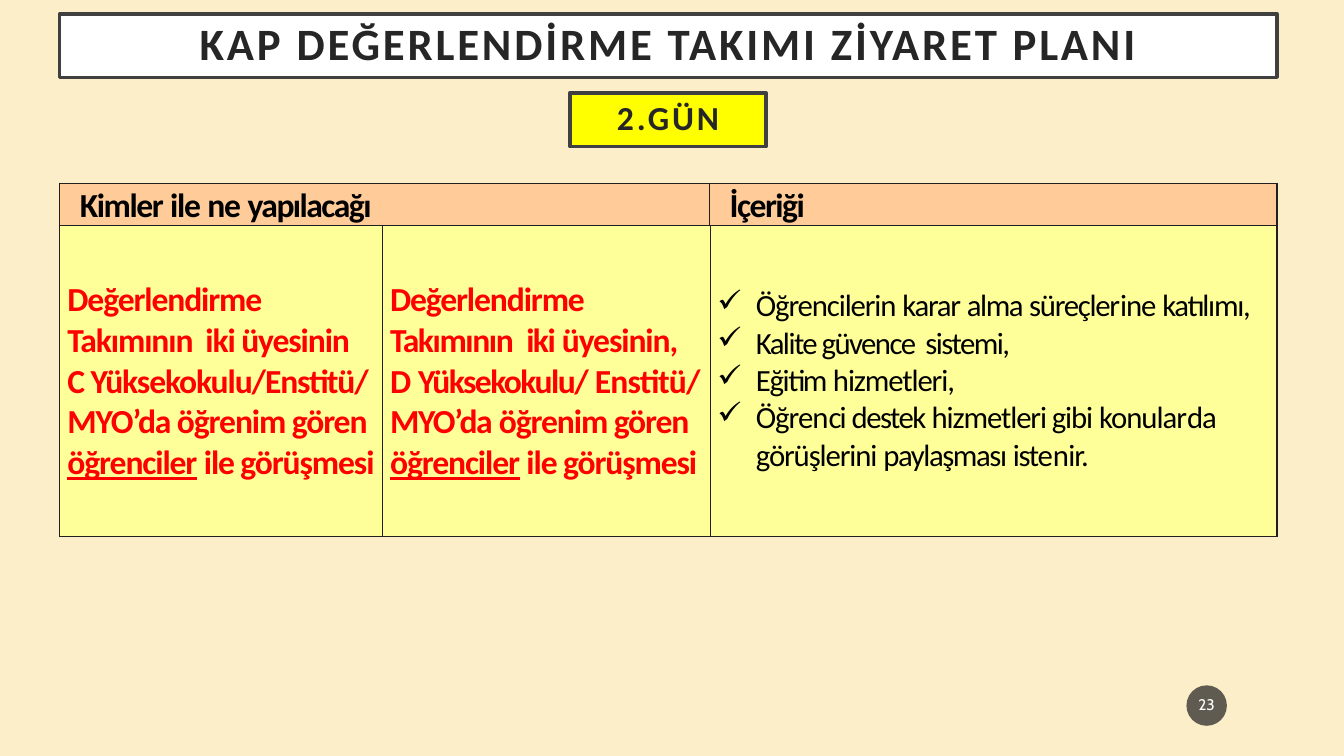
from dataclasses import dataclass

from lxml.etree import SubElement
from pptx import Presentation
from pptx.dml.color import RGBColor
from pptx.enum.shapes import MSO_SHAPE
from pptx.enum.text import MSO_ANCHOR, PP_ALIGN
from pptx.oxml.ns import qn
from pptx.util import Cm, Pt

LEFT = 1.5
WIDTH = 30.68
RED = "FF0000"
BLACK = "000000"
PALE_YELLOW = "FFFF99"


@dataclass
class Run:
    text: str
    spacing: float = -0.8
    underline: bool = False


@dataclass
class Label:
    text: str
    left: float
    top: float
    width: float
    height: float
    fill: str
    size: float
    color: str = "262626"
    font: str = "Calibri"
    bold: bool = True
    spacing: float = 2
    margin: float = 0.5
    geometry: MSO_SHAPE = MSO_SHAPE.RECTANGLE
    line: str | None = "404040"
    opacity: int = 100


@dataclass
class CellContent:
    paragraphs: list[list[Run]]
    fill: str = PALE_YELLOW
    color: str = RED
    size: float = 24
    bold: bool = True
    indent: float = 0.2
    hanging: float = 0
    bullet: str = ""
    space_before: float = 0
    top_margin: float = 0.03


@dataclass
class TableBand:
    top: float
    height: float
    column_widths: list[float]
    cells: list[CellContent]


def rgb(color: str) -> RGBColor:
    return RGBColor.from_string(color)


def add_text(paragraph, text: str, *, size: float, color: str, font: str = "Calibri",
             bold: bool = False, underline: bool = False, spacing: float = 0) -> None:
    run = paragraph.add_run()
    run.text = text
    run.font.name = font
    run.font.size = Pt(size)
    run.font.bold = bold
    run.font.underline = underline
    run.font.color.rgb = rgb(color)
    run._r.get_or_add_rPr().set("spc", str(round(spacing * 100)))


def add_label(slide, label: Label) -> None:
    shape = slide.shapes.add_shape(label.geometry, Cm(label.left), Cm(label.top),
                                   Cm(label.width), Cm(label.height))
    shape.shadow.inherit = False
    shape.fill.solid()
    shape.fill.fore_color.rgb = rgb(label.fill)
    if label.opacity < 100:
        color = shape._element.spPr.find(qn("a:solidFill"))[0]
        SubElement(color, qn("a:alpha")).set("val", str(label.opacity * 1000))
    if label.line:
        shape.line.color.rgb = rgb(label.line)
        shape.line.width = Pt(2.5)
    else:
        shape.line.fill.background()
    frame = shape.text_frame
    frame.word_wrap = True
    frame.vertical_anchor = MSO_ANCHOR.MIDDLE
    frame.margin_left = frame.margin_right = Cm(label.margin)
    frame.margin_top = frame.margin_bottom = Cm(label.margin)
    paragraph = frame.paragraphs[0]
    paragraph.alignment = PP_ALIGN.CENTER
    paragraph.line_spacing = 0.9
    add_text(paragraph, label.text, size=label.size, color=label.color,
             font=label.font, bold=label.bold, spacing=label.spacing)


def set_borders(cell, color: str = "231F20", width: float = 1) -> None:
    properties = cell._tc.get_or_add_tcPr()
    for side in ("lnL", "lnR", "lnT", "lnB"):
        line = SubElement(properties, qn(f"a:{side}"), w=str(Pt(width)))
        SubElement(SubElement(line, qn("a:solidFill")), qn("a:srgbClr"), val=color)


def fill_cell(cell, content: CellContent) -> None:
    set_borders(cell)
    cell.fill.solid()
    cell.fill.fore_color.rgb = rgb(content.fill)
    cell.vertical_anchor = MSO_ANCHOR.MIDDLE
    cell.margin_left = cell.margin_right = cell.margin_bottom = 0
    cell.margin_top = Cm(content.top_margin)
    frame = cell.text_frame
    for index, runs in enumerate(content.paragraphs):
        paragraph = frame.add_paragraph() if index else frame.paragraphs[0]
        paragraph.space_before = Pt(content.space_before)
        properties = paragraph._p.get_or_add_pPr()
        properties.set("marL", str(Cm(content.indent)))
        properties.set("indent", str(Cm(-content.hanging)))
        if content.bullet:
            SubElement(properties, qn("a:buChar"), char=content.bullet)
        for run in runs:
            add_text(paragraph, run.text, size=content.size, color=content.color,
                     bold=content.bold, underline=run.underline, spacing=run.spacing)


def add_band(slide, band: TableBand) -> None:
    table = slide.shapes.add_table(1, len(band.cells), Cm(LEFT), Cm(band.top),
                                   Cm(WIDTH), Cm(band.height)).table
    table.first_row = table.horz_banding = False
    for column, width in zip(table.columns, band.column_widths):
        column.width = Cm(width)
    for cell, content in zip(table.iter_cells(), band.cells):
        fill_cell(cell, content)


def heading(runs: list[Run]) -> CellContent:
    return CellContent([runs], fill="FFCC99", color=BLACK, indent=2.67, hanging=2.16,
                       space_before=1.6, top_margin=0.05)


LABELS = [
    Label("23", 29.9, 17.27, 1.02, 1.02, "1D1D1D", 11, color="FFFFFF", font="Cabin",
          bold=False, spacing=0, margin=0.05, geometry=MSO_SHAPE.OVAL, line=None, opacity=70),
    Label("KAP DEĞERLENDİRME TAKIMI ZİYARET PLANI", LEFT, 0.35, WIDTH, 1.6, "FFFFFF", 32),
    Label("2.GÜN", 14.36, 2.34, 4.95, 1.35, "FFFF00", 24),
]

STUDENTS = [Run("öğrenciler", underline=True), Run(" ile görüşmesi")]

TEAM_C = CellContent([
    [Run("Değerlendirme Takımının  iki üyesinin")],
    [Run("C Yüksekokulu/Enstitü/")],
    [Run("MYO’da öğrenim gören "), *STUDENTS],
])
TEAM_D = CellContent([
    [Run("Değerlendirme "), Run("Takımının  ", -1), Run("iki ", -1.1), Run("üyesinin,")],
    [Run("D ", -0.5), Run("Yüksekokulu/ ", -1.1), Run("Enstitü/", -0.6)],
    [Run("MYO’da ", -1), Run("öğrenim gören "), *STUDENTS],
])
TOPICS = CellContent([
    [Run("Öğrencilerin "), Run("karar ", -0.9), Run("alma ", -1), Run("süreçler", -0.9),
     Run("ine "), Run("katılımı,", -0.9)],
    [Run("Kalite güvence  sistemi,", -1.1)],
    [Run("Eğitim ", -1), Run("hizmetleri,")],
    [Run("Öğren", -0.7), Run("ci ", -1.4), Run("destek ", -1.1), Run("hizmetleri gibi "),
     Run("konular", -0.7), Run("da görüşlerini "), Run("paylaşması ", -1),
     Run("iste", -0.9), Run("nir.", -0.6)],
], color=BLACK, size=22, bold=False, indent=1.14, hanging=0.97, bullet="✓", top_margin=0)

BANDS = [
    TableBand(4.62, 1.04, [16.38, 14.3], [
        heading([Run("Kimler ", -1), Run("ile ", -0.9), Run("ne "), Run("yapılacağı", -1.1)]),
        heading([Run("İçeriği", -1.1)]),
    ]),
    TableBand(5.69, 7.82, [8.13, 8.28, 14.27], [TEAM_C, TEAM_D, TOPICS]),
]


def main() -> None:
    presentation = Presentation()
    presentation.slide_width = Cm(33.87)
    presentation.slide_height = Cm(19.05)
    slide = presentation.slides.add_slide(presentation.slide_layouts[6])
    slide.background.fill.solid()
    slide.background.fill.fore_color.rgb = rgb("FBEEC9")
    for label in LABELS:
        add_label(slide, label)
    for band in BANDS:
        add_band(slide, band)
    presentation.save("out.pptx")


if __name__ == "__main__":
    main()
